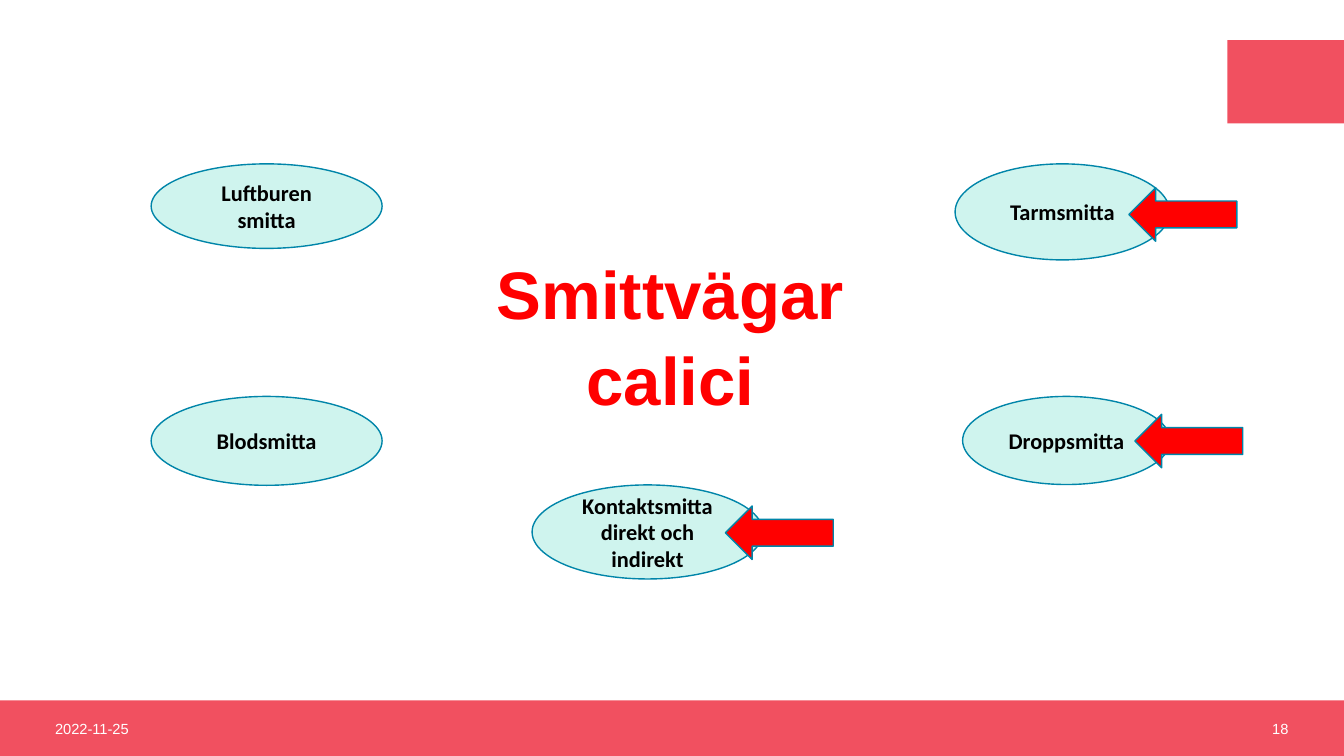
from dataclasses import dataclass

from pptx import Presentation
from pptx.dml.color import RGBColor
from pptx.enum.shapes import MSO_SHAPE
from pptx.enum.text import MSO_ANCHOR, MSO_AUTO_SIZE, PP_ALIGN
from pptx.shapes.autoshape import Shape
from pptx.slide import Slide
from pptx.util import Cm, Pt

RECTANGLE = MSO_SHAPE.RECTANGLE
OVAL = MSO_SHAPE.OVAL
LEFT_ARROW = MSO_SHAPE.LEFT_ARROW
TOP, MIDDLE = MSO_ANCHOR.TOP, MSO_ANCHOR.MIDDLE
LEFT, CENTER, RIGHT = PP_ALIGN.LEFT, PP_ALIGN.CENTER, PP_ALIGN.RIGHT

COLORS = {
    "band": "F15060",
    "route": "CFF4EE",
    "outline": "0085A9",
    "red": "FF0000",
    "black": "000000",
    "white": "FFFFFF",
}
SLIDE_WIDTH, SLIDE_HEIGHT = 33.87, 19.05
FOOTER_TOP, FOOTER_HEIGHT = 17.65, 1.4
ARROW_WIDTH, ARROW_HEIGHT = 2.72, 1.35


@dataclass(frozen=True)
class Box:
    left: float
    top: float
    width: float
    height: float

    def lengths(self) -> tuple[Cm, Cm, Cm, Cm]:
        return Cm(self.left), Cm(self.top), Cm(self.width), Cm(self.height)


@dataclass(frozen=True)
class Route:
    label: str
    box: Box


@dataclass(frozen=True)
class FooterNote:
    text: str
    left: float
    alignment: PP_ALIGN


BANDS = [
    Box(0, FOOTER_TOP, SLIDE_WIDTH, FOOTER_HEIGHT),
    Box(30.93, 1.01, 2.94, 2.1),
]
ROUTES = [
    Route("Luftburen smitta", Box(3.81, 4.13, 5.82, 2.13)),
    Route("Blodsmitta", Box(3.81, 9.99, 5.82, 2.24)),
    Route("Kontaktsmitta\ndirekt och indirekt", Box(13.41, 12.22, 5.82, 2.37)),
    Route("Tarmsmitta", Box(24.07, 4.13, 5.41, 2.42)),
    Route("Droppsmitta", Box(24.26, 9.99, 5.23, 2.22)),
]
ARROW_CORNERS = [(28.45, 4.73), (28.6, 10.44), (18.28, 12.75)]
FOOTER_NOTES = [
    FooterNote("2022-11-25", 1.14, LEFT),
    FooterNote("18", 25.1, RIGHT),
]


def color(name: str) -> RGBColor:
    return RGBColor.from_string(COLORS[name])


def add_figure(slide: Slide, kind: MSO_SHAPE, box: Box, fill: str, outlined: bool) -> Shape:
    figure = slide.shapes.add_shape(kind, *box.lengths())
    figure.shadow.inherit = False
    figure.fill.solid()
    figure.fill.fore_color.rgb = color(fill)
    if outlined:
        figure.line.color.rgb = color("outline")
        figure.line.width = Pt(1)
    else:
        figure.line.fill.background()
    return figure


def write(holder: Shape, text: str, font_name: str, size: float, font_color: str,
          bold: bool, alignment: PP_ALIGN, anchor: MSO_ANCHOR) -> None:
    frame = holder.text_frame
    frame.text = text
    frame.word_wrap = True
    frame.vertical_anchor = anchor
    for paragraph in frame.paragraphs:
        paragraph.alignment = alignment
        paragraph.font.name = font_name
        paragraph.font.size = Pt(size)
        paragraph.font.bold = bold
        paragraph.font.color.rgb = color(font_color)


def place_title(slide: Slide) -> None:
    title = slide.shapes.title
    title.left, title.top, title.width, title.height = Box(3.18, 6.45, 27.43, 12.32).lengths()
    write(title, "Smittvägar\ncalici", "Arial", 48, "red", True, CENTER, TOP)
    title.text_frame.auto_size = MSO_AUTO_SIZE.NONE
    for position, paragraph in enumerate(title.text_frame.paragraphs):
        paragraph.line_spacing = 0.9
        paragraph.space_before = Pt(10 if position else 0)


def add_route(slide: Slide, route: Route) -> None:
    oval = add_figure(slide, OVAL, route.box, "route", True)
    write(oval, route.label, "Calibri", 16, "black", True, CENTER, MIDDLE)


def add_footer_note(slide: Slide, note: FooterNote) -> None:
    box = Box(note.left, FOOTER_TOP, 7.62, FOOTER_HEIGHT)
    holder = slide.shapes.add_textbox(*box.lengths())
    write(holder, note.text, "Arial", 10.5, "white", False, note.alignment, MIDDLE)


def main() -> None:
    presentation = Presentation()
    presentation.slide_width = Cm(SLIDE_WIDTH)
    presentation.slide_height = Cm(SLIDE_HEIGHT)
    slide = presentation.slides.add_slide(presentation.slide_layouts[5])

    place_title(slide)
    for band in BANDS:
        add_figure(slide, RECTANGLE, band, "band", False)
    for note in FOOTER_NOTES:
        add_footer_note(slide, note)
    for route in ROUTES:
        add_route(slide, route)
    for left, top in ARROW_CORNERS:
        add_figure(slide, LEFT_ARROW, Box(left, top, ARROW_WIDTH, ARROW_HEIGHT), "red", True)

    presentation.save("out.pptx")


if __name__ == "__main__":
    main()
